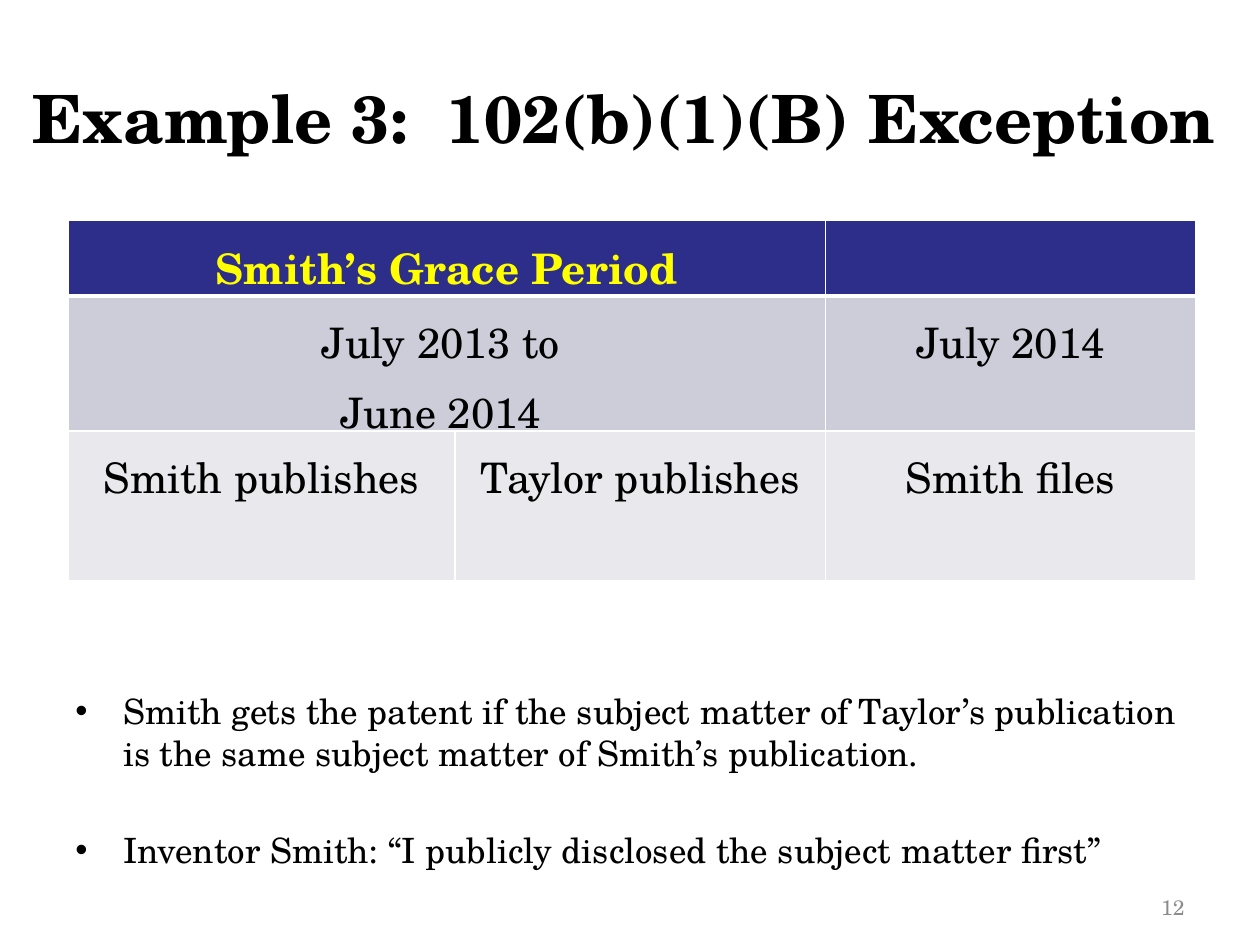
from dataclasses import dataclass

from lxml.etree import SubElement
from pptx import Presentation
from pptx.dml.color import RGBColor
from pptx.enum.text import MSO_ANCHOR, PP_ALIGN
from pptx.oxml import parse_xml
from pptx.oxml.ns import nsdecls, qn
from pptx.util import Inches, Pt

SLIDE_WIDTH, SLIDE_HEIGHT = 10, 7.5


@dataclass(frozen=True)
class Theme:
    font: str = "TeX Gyre Schola"
    ink: str = "000000"
    heading: str = "FFFF00"
    muted: str = "8C8C8C"
    border: str = "FFFFFF"
    title_size: float = 38
    table_size: float = 24
    body_size: float = 19.9
    number_size: float = 12
    gap: float = 0.2  # paragraph gap as a share of the type size


@dataclass(frozen=True)
class Area:
    """A rectangle given in shares of the slide's size."""
    left: float
    top: float
    width: float
    height: float

    def lengths(self) -> tuple:
        return (Inches(self.left * SLIDE_WIDTH), Inches(self.top * SLIDE_HEIGHT),
                Inches(self.width * SLIDE_WIDTH), Inches(self.height * SLIDE_HEIGHT))


@dataclass(frozen=True)
class Entry:
    """Lines of one table cell and the number of columns it covers."""
    lines: tuple = ()
    span: int = 1


@dataclass(frozen=True)
class Row:
    height: float
    fill: str
    entries: tuple
    color: str = Theme.ink
    bold: bool = False
    rule: float = 1


THEME = Theme()
TITLE_AREA = Area(0.008, 0.04, 0.975, 0.167)
TABLE_AREA = Area(0.054, 0.2333, 0.895, 0.38)
BODY_AREA = Area(0.05, 0.723, 0.9, 0.17)
NUMBER_AREA = Area(0.717, 0.91, 0.233, 0.07)

COLUMNS = (3.07, 2.94, 2.94)
ROWS = (
    Row(0.6, "2D2D8A", (Entry(("Smith’s Grace Period",), 2), Entry()),
        THEME.heading, True, 3),
    Row(1.07, "CDCDDA", (Entry(("July 2013 to ", "June 2014 "), 2),
                         Entry(("July 2014",)))),
    Row(1.19, "E8E8ED", (Entry(("Smith publishes",)), Entry(("Taylor publishes",)),
                         Entry(("Smith files",)))),
)
POINTS = (
    "Smith gets the patent if the subject matter of Taylor’s publication "
    "is the same subject matter of Smith’s publication.",
    "Inventor Smith: “I publicly disclosed the subject matter first”",
)


def add_span(para, text: str, size: float, color: str = THEME.ink,
             bold: bool = False) -> None:
    span = para.add_run()
    span.text = text
    span.font.name = THEME.font
    span.font.size = Pt(size)
    span.font.bold = bold
    span.font.color.rgb = RGBColor.from_string(color)


def add_frame(page, area: Area, anchor=MSO_ANCHOR.TOP):
    frame = page.shapes.add_textbox(*area.lengths()).text_frame
    frame.word_wrap = True
    frame.vertical_anchor = anchor
    return frame


def next_para(frame, index: int, gap: float):
    """Return the first paragraph, or a new one set off by a gap in points."""
    if index == 0:
        return frame.paragraphs[0]
    para = frame.add_paragraph()
    para.space_before = Pt(gap)
    return para


def add_label(page, area: Area, text: str, size: float, color: str,
              bold: bool, align, anchor) -> None:
    para = add_frame(page, area, anchor).paragraphs[0]
    para.alignment = align
    add_span(para, text, size, color, bold)


def style_cell(cell, row: Row, rule_above: float) -> None:
    cell.fill.solid()
    cell.fill.fore_color.rgb = RGBColor.from_string(row.fill)
    cell.margin_top = Inches(0.05) + Pt(THEME.table_size * THEME.gap)
    properties = cell._tc.get_or_add_tcPr()
    widths = {"lnL": 1, "lnR": 1, "lnT": rule_above, "lnB": row.rule}
    for place, (side, width) in enumerate(widths.items()):
        properties.insert(place, parse_xml(
            f'<a:{side} {nsdecls("a")} w="{Pt(width)}"><a:solidFill>'
            f'<a:srgbClr val="{THEME.border}"/></a:solidFill></a:{side}>'))


def add_timeline(page) -> None:
    table = page.shapes.add_table(len(ROWS), len(COLUMNS),
                                  *TABLE_AREA.lengths()).table
    for column, width in zip(table.columns, COLUMNS):
        column.width = Inches(width)
    rule_above = 1
    for row_index, row in enumerate(ROWS):
        table.rows[row_index].height = Inches(row.height)
        for column_index in range(len(COLUMNS)):
            style_cell(table.cell(row_index, column_index), row, rule_above)
        rule_above = row.rule
        start = 0
        for entry in row.entries:
            cell = table.cell(row_index, start)
            if entry.span > 1:
                cell.merge(table.cell(row_index, start + entry.span - 1))
            for index, line in enumerate(entry.lines):
                para = next_para(cell.text_frame, index, THEME.table_size * THEME.gap)
                para.alignment = PP_ALIGN.CENTER
                add_span(para, line, THEME.table_size, row.color, row.bold)
            start += entry.span


def add_points(page) -> None:
    frame = add_frame(page, BODY_AREA)
    for index, text in enumerate(POINTS):
        para = next_para(frame, index, 32)
        properties = para._p.get_or_add_pPr()
        properties.set("marL", str(Inches(0.38)))
        properties.set("indent", str(-Inches(0.38)))
        SubElement(properties, qn("a:buFont")).set("typeface", "Arial")
        SubElement(properties, qn("a:buChar")).set("char", "•")
        add_span(para, text, THEME.body_size)


def main() -> None:
    deck = Presentation()
    deck.slide_width, deck.slide_height = Inches(SLIDE_WIDTH), Inches(SLIDE_HEIGHT)
    page = deck.slides.add_slide(deck.slide_layouts[6])
    # Bullets and page number
    add_points(page)
    add_label(page, NUMBER_AREA, "12", THEME.number_size, THEME.muted, False,
              PP_ALIGN.RIGHT, MSO_ANCHOR.BOTTOM)
    # Grace period table
    add_timeline(page)
    # Title
    add_label(page, TITLE_AREA, "Example 3:  102(b)(1)(B) Exception",
              THEME.title_size, THEME.ink, True, PP_ALIGN.CENTER, MSO_ANCHOR.MIDDLE)
    deck.save("out.pptx")


if __name__ == "__main__":
    main()
